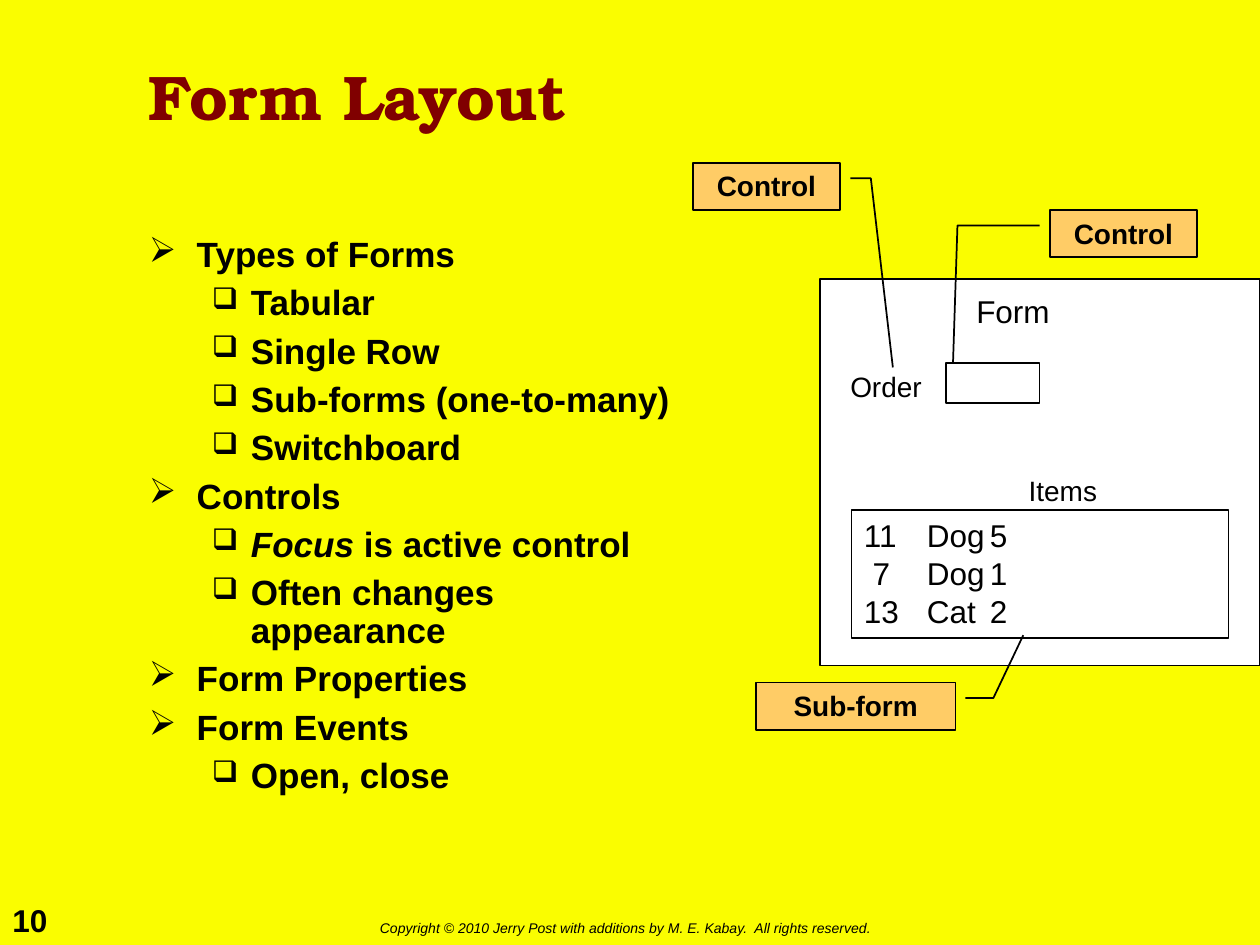
"""Build the Form Layout slide with its outline and annotated form diagram."""
from dataclasses import dataclass

from lxml.etree import SubElement
from pptx import Presentation
from pptx.dml.color import RGBColor
from pptx.enum.shapes import MSO_SHAPE
from pptx.enum.text import MSO_ANCHOR, PP_ALIGN
from pptx.oxml.ns import qn
from pptx.util import Inches, Pt


@dataclass(frozen=True)
class Theme:
    background: str = "FAFD00"
    heading: str = "800000"
    ink: str = "000000"
    paper: str = "FFFFFF"
    callout: str = "FFCC66"
    display_font: str = "TeX Gyre Bonum"
    text_font: str = "Arial"
    title_size: int = 36
    body_size: int = 20
    form_size: int = 18
    label_size: int = 16
    footer_size: int = 8


theme = Theme()
deck = Presentation()
deck.slide_width, deck.slide_height = Inches(10), Inches(7.5)
unit = deck.slide_width / 120
page = deck.slides.add_slide(deck.slide_layouts[6])
page.background.fill.solid()
page.background.fill.fore_color.rgb = RGBColor.from_string(theme.background)


def write(box, text, size, bold=False, italic=False, wrap=True,
          color=theme.ink, font=theme.text_font, align=PP_ALIGN.LEFT):
    frame = box.text_frame
    frame.text = text
    frame.word_wrap = wrap
    frame.vertical_anchor = MSO_ANCHOR.TOP
    for para in frame.paragraphs:
        para.alignment = align
        for span in para.runs:
            span.font.name, span.font.size = font, Pt(size)
            span.font.bold, span.font.italic = bold, italic
            span.font.color.rgb = RGBColor.from_string(color)


def draw(kind, grid, fill=None):
    shape = page.shapes.add_shape(kind, *(round(cell * unit) for cell in grid))
    shape.shadow.inherit = False
    if fill:
        shape.fill.solid()
        shape.fill.fore_color.rgb = RGBColor.from_string(fill)
    else:
        shape.fill.background()
    shape.line.color.rgb = RGBColor.from_string(theme.ink)
    shape.line.width = Pt(1)
    return shape


form = draw(MSO_SHAPE.RECTANGLE, (78.1, 26.6, 41.9, 36.8), theme.paper)
order_field = draw(MSO_SHAPE.RECTANGLE, (90.1, 34.6, 8.9, 3.8), theme.paper)
items = draw(MSO_SHAPE.RECTANGLE, (81.1, 48.6, 35.9, 12.2))
write(items, "11\tDog\t5\n 7\tDog\t1\n13\tCat\t2", theme.form_size)

labels = [
    ("10", (0, 85.2, 6.1, 4.8), theme.form_size, True, False),
    ("Copyright © 2010 Jerry Post with additions by M. E. Kabay.  All rights reserved.",
     (35, 87, 50.6, 2.9), theme.footer_size, False, True),
    ("Form", (91.8, 27.2, 9.4, 4.8), theme.form_size, False, False),
    ("Order", (79.8, 34.6, 9.2, 4.4), theme.label_size, False, False),
    ("Items", (96.8, 44.5, 8.9, 4.4), theme.label_size, False, False),
]
for text, grid, size, bold, italic in labels:
    label = page.shapes.add_textbox(*(round(cell * unit) for cell in grid))
    write(label, text, size, bold, italic, wrap=False)

title = page.shapes.add_textbox(*(round(cell * unit) for cell in (13, 2, 94, 15)))
write(title, "Form Layout", theme.title_size, bold=True,
      color=theme.heading, font=theme.display_font)
title.text_frame.vertical_anchor = MSO_ANCHOR.MIDDLE
title.text_frame.paragraphs[0].line_spacing = 0.9

bullets = [("➢", 0.38, -0.38, 100), ("❑", 0.81, -0.31, 85)]
outline = [
    (0, "Types of Forms"),
    (1, "Tabular"),
    (1, "Single Row"),
    (1, "Sub-forms (one-to-many)"),
    (1, "Switchboard"),
    (0, "Controls"),
    (1, "Focus"),
    (1, "Often changes appearance"),
    (0, "Form Properties"),
    (0, "Form Events"),
    (1, "Open, close"),
]
body = page.shapes.add_textbox(*(round(cell * unit) for cell in (13, 22, 53, 62)))
write(body, "\n".join(text for level, text in outline), theme.body_size, bold=True)
for index, (para, (level, text)) in enumerate(zip(body.text_frame.paragraphs, outline)):
    symbol, margin, indent, percent = bullets[level]
    para.level = level
    para.line_spacing = 0.9
    para.space_before = Pt(6 if index else 0)
    props = para._p.get_or_add_pPr()
    props.set("marL", str(Inches(margin)))
    props.set("indent", str(Inches(indent)))
    SubElement(SubElement(props, qn("a:buClr")), qn("a:srgbClr"), val=theme.ink)
    SubElement(props, qn("a:buSzPct"), val=str(percent * 1000))
    SubElement(props, qn("a:buChar"), char=symbol)
    if text == "Focus":
        para.runs[0].font.italic = True
        span = para.add_run()
        span.text = " is active control"
        span.font.name, span.font.size = theme.text_font, Pt(theme.body_size)
        span.font.bold = True
        span.font.color.rgb = RGBColor.from_string(theme.ink)

callouts = [
    ("Control", (66, 15.5, 14, 4.5), (0.33, 1.07, 0.33, 1.21, 4.33, 1.36)),
    ("Control", (100, 20, 14, 4.5), (0.33, -0.07, 0.33, -0.63, 3.22, -0.66)),
    ("Sub-form", (72, 65, 19, 4.5), (0.33, 1.05, 0.33, 1.19, -1, 1.34)),
]
for text, grid, leader in callouts:
    callout = draw(MSO_SHAPE.LINE_CALLOUT_2, grid, theme.callout)
    for index, value in enumerate(leader):
        callout.adjustments[index] = value
    write(callout, text, theme.label_size, bold=True, align=PP_ALIGN.CENTER)

deck.save("out.pptx")
